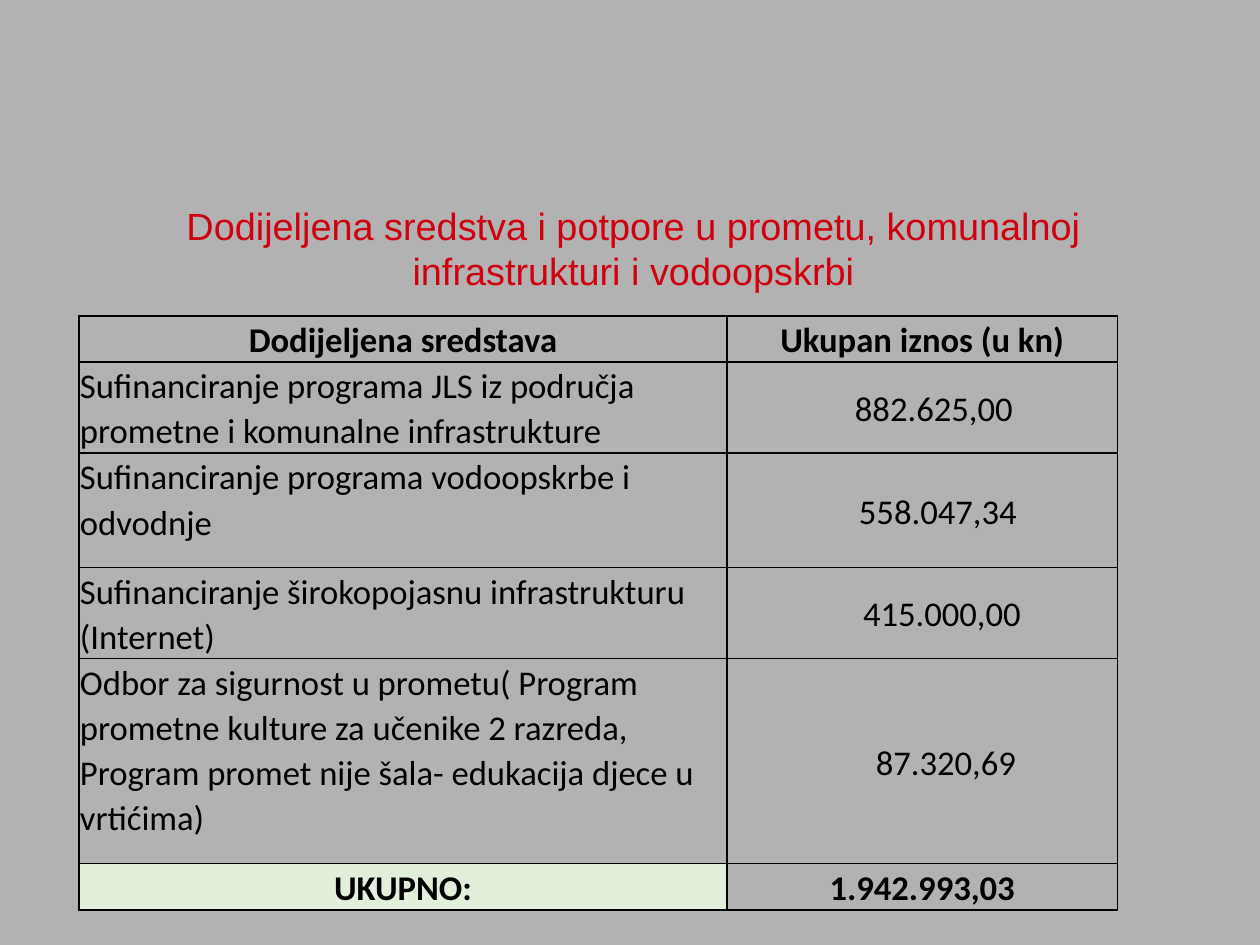
"""Build a slide with a table of funds granted for transport and utilities."""
import lxml.etree
import pptx
import pptx.dml.color
import pptx.enum.text
import pptx.oxml.ns
import pptx.util
from dataclasses import dataclass

Cm = pptx.util.Cm
Pt = pptx.util.Pt
Align = pptx.enum.text.PP_ALIGN
Anchor = pptx.enum.text.MSO_ANCHOR

TITLE = "Dodijeljena sredstva i potpore u prometu, komunalnoj infrastrukturi i vodoopskrbi"
HEADER = ("Dodijeljena sredstava", "Ukupan iznos (u kn)")
GRANTS = [
    ("Sufinanciranje programa JLS iz područja prometne i komunalne infrastrukture", "882.625,00"),
    ("Sufinanciranje programa vodoopskrbe i odvodnje", "558.047,34"),
    ("Sufinanciranje širokopojasnu infrastrukturu (Internet)", "415.000,00"),
    ("Odbor za sigurnost u prometu( Program prometne kulture za učenike 2 razreda, "
     "Program promet nije šala- edukacija djece u vrtićima)", "87.320,69"),
]
TOTAL = ("UKUPNO:", "1.942.993,03")
ROWS = [HEADER, *GRANTS, TOTAL]
ROW_HEIGHTS = (1.03, 2.04, 2.56, 2.04, 4.59, 1.03)
COLUMN_WIDTHS = (14.5, 8.74)
SLIDE_SIZE = {"slide_width": Cm(28.2), "slide_height": Cm(21.15)}
TITLE_PLACE = {"left": Cm(3.1), "top": Cm(4.4), "width": Cm(22.15), "height": Cm(1.68)}
TABLE_LEFT, TABLE_TOP = 1.77, 7.07
FIRST_INDENT, INDENT_STEP = 0.52, 0.18


@dataclass(frozen=True)
class Theme:
    """Colours, fonts and type sizes of the slide."""
    background: str = "B2B2B2"
    title: str = "D1000E"
    ink: str = "000000"
    total: str = "E2EFDA"
    title_font: str = "Arial"
    table_font: str = "Calibri"
    title_size: int = 24
    table_size: int = 22
    border: float = 1


THEME = Theme()


def rgb(value):
    """Turn a hex string into a colour."""
    return pptx.dml.color.RGBColor.from_string(value)


def apply(target, values):
    """Set every named attribute on the target."""
    for name, value in values.items():
        setattr(target, name, value)


def write(box, text, colour, para_format, font_format):
    """Put one formatted paragraph in a text frame."""
    box.text = text
    para = box.paragraphs[0]
    apply(para, para_format)
    span = para.runs[0]
    apply(span.font, font_format)
    span.font.color.rgb = rgb(colour)


def add_borders(cell):
    """Draw a solid line on each side of a cell."""
    properties = cell._tc.get_or_add_tcPr()
    qn = pptx.oxml.ns.qn
    for side in ("a:lnL", "a:lnR", "a:lnT", "a:lnB"):
        line = lxml.etree.SubElement(properties, qn(side), w=str(Pt(THEME.border)))
        fill = lxml.etree.SubElement(line, qn("a:solidFill"))
        lxml.etree.SubElement(fill, qn("a:srgbClr"), val=THEME.ink)


def add_title(page):
    """Place and format the title."""
    title = page.shapes.title
    apply(title, TITLE_PLACE)
    apply(title.text_frame, {"word_wrap": True, "vertical_anchor": Anchor.TOP,
                             "auto_size": pptx.enum.text.MSO_AUTO_SIZE.NONE})
    write(title.text_frame, TITLE, THEME.title,
          {"alignment": Align.CENTER},
          {"name": THEME.title_font, "size": Pt(THEME.title_size), "bold": False})


def fill_cell(cell, text, row, column):
    """Format one table cell according to its place."""
    is_grant = 0 < row < len(ROWS) - 1
    is_label = is_grant and column == 0
    indent = FIRST_INDENT + INDENT_STEP * (row - 1) if is_grant and column else 0
    apply(cell, {
        "margin_left": Cm(0.02 + indent), "margin_right": Cm(0.02),
        "margin_top": Cm(0.02), "margin_bottom": 0,
        "vertical_anchor": Anchor.TOP if is_label else Anchor.MIDDLE,
    })
    write(cell.text_frame, text, THEME.ink,
          {"alignment": Align.LEFT if is_label else Align.CENTER, "line_spacing": 1.07},
          {"name": THEME.table_font, "size": Pt(THEME.table_size), "bold": not is_grant})
    add_borders(cell)
    if text == TOTAL[0]:
        cell.fill.solid()
        cell.fill.fore_color.rgb = rgb(THEME.total)
    else:
        cell.fill.background()


def add_grants(page):
    """Add the table of grants."""
    table = page.shapes.add_table(
        len(ROWS), len(HEADER), Cm(TABLE_LEFT), Cm(TABLE_TOP),
        Cm(sum(COLUMN_WIDTHS)), Cm(sum(ROW_HEIGHTS))).table
    apply(table, {"first_row": False, "horz_banding": False})
    for column, width in zip(table.columns, COLUMN_WIDTHS):
        column.width = Cm(width)
    for row, height in zip(table.rows, ROW_HEIGHTS):
        row.height = Cm(height)
    for row, texts in enumerate(ROWS):
        for column, text in enumerate(texts):
            fill_cell(table.cell(row, column), text, row, column)


def main():
    """Build and save the deck."""
    deck = pptx.Presentation()
    apply(deck, SLIDE_SIZE)
    page = deck.slides.add_slide(deck.slide_layouts[5])
    page.background.fill.solid()
    page.background.fill.fore_color.rgb = rgb(THEME.background)
    add_title(page)
    add_grants(page)
    deck.save("out.pptx")


if __name__ == "__main__":
    main()
